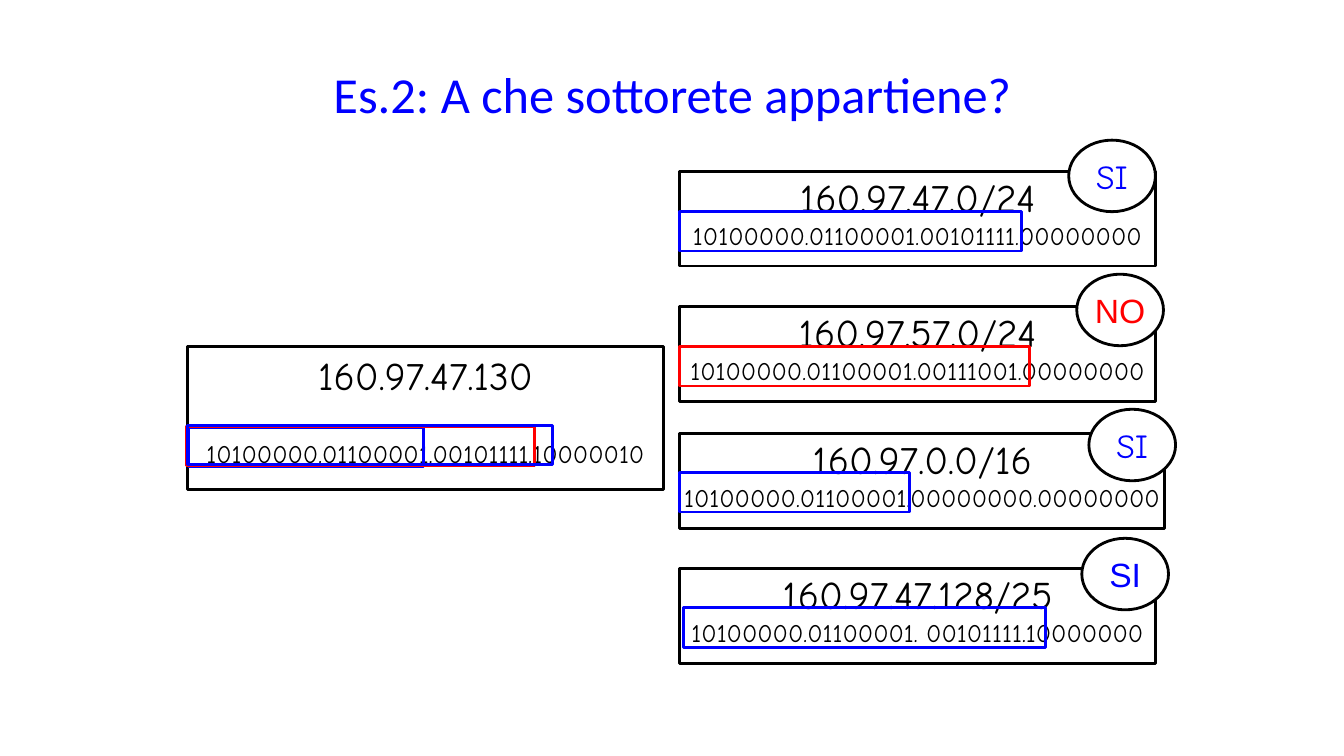
from dataclasses import dataclass

from pptx import Presentation
from pptx.dml.color import RGBColor
from pptx.enum.shapes import MSO_SHAPE
from pptx.enum.text import MSO_ANCHOR, PP_ALIGN
from pptx.util import Inches, Pt

RECTANGLE = MSO_SHAPE.RECTANGLE
OVAL = MSO_SHAPE.OVAL
MIDDLE = MSO_ANCHOR.MIDDLE
TOP = MSO_ANCHOR.TOP
CENTER = PP_ALIGN.CENTER

BLACK = RGBColor(0, 0, 0)
WHITE = RGBColor(255, 255, 255)
BLUE = RGBColor(0, 0, 255)
RED = RGBColor(255, 0, 0)
COMIC = "Comic Neue"
ARIAL = "Arial"


@dataclass
class AddressBox:
    left: float
    top: float
    width: float
    height: float
    address: str
    bits: str
    inset: float = 0.02
    gap: float = 0


@dataclass
class Verdict:
    left: float
    top: float
    text: str
    font: str
    color: RGBColor


@dataclass
class PrefixFrame:
    left: float
    top: float
    width: float
    color: RGBColor


ADDRESS_BOXES = [
    AddressBox(6.74, 1.7, 4.72, 0.94, "160.97.47.0/24",
               "10100000.01100001.00101111.00000000"),
    AddressBox(1.86, 3.44, 4.72, 1.42, "160.97.47.130",
               "10100000.01100001.00101111.10000010", inset=0.04, gap=29),
    AddressBox(6.74, 3.04, 4.72, 0.94, "160.97.57.0/24",
               "10100000.01100001.00111001.00000000"),
    AddressBox(6.74, 4.3, 4.81, 0.94, "160.97.0.0/16",
               "10100000.01100001.00000000.00000000"),
    AddressBox(6.74, 5.64, 4.72, 0.94, "160.97.47.128/25",
               "10100000.01100001. 00101111.10000000"),
]
VERDICTS = [
    Verdict(10.6, 1.39, "SI", COMIC, BLUE),
    Verdict(10.8, 4.06, "SI", COMIC, BLUE),
    Verdict(10.68, 2.72, "NO", ARIAL, RED),
    Verdict(10.73, 5.34, "SI", ARIAL, BLUE),
]
PREFIX_FRAMES = [
    PrefixFrame(6.74, 2.1, 3.39, BLUE),
    PrefixFrame(6.74, 3.44, 3.47, RED),
    PrefixFrame(6.74, 4.69, 2.28, BLUE),
    PrefixFrame(1.85, 4.23, 3.45, BLUE),
    PrefixFrame(1.87, 4.24, 2.33, BLUE),
    PrefixFrame(1.85, 4.23, 3.45, RED),
    PrefixFrame(1.86, 4.22, 3.62, BLUE),
    PrefixFrame(6.78, 6.03, 3.59, BLUE),
]


def add_outline(slide, kind, left: float, top: float, width: float,
                height: float, color: RGBColor):
    """Add an unfilled shape with a two-point line and no text margins."""
    shape = slide.shapes.add_shape(
        kind, Inches(left), Inches(top), Inches(width), Inches(height))
    shape.shadow.inherit = False
    shape.fill.background()
    shape.line.color.rgb = color
    shape.line.width = Pt(2)
    frame = shape.text_frame
    frame.word_wrap = False
    frame.margin_left = frame.margin_right = 0
    frame.margin_top = frame.margin_bottom = 0
    return shape


def format_paragraph(paragraph, text: str, size: float, font: str,
                     color: RGBColor) -> None:
    paragraph.text = text
    paragraph.alignment = CENTER
    paragraph.font.size = Pt(size)
    paragraph.font.name = font
    paragraph.font.color.rgb = color


def add_address_box(slide, box: AddressBox) -> None:
    shape = add_outline(slide, RECTANGLE, box.left, box.top, box.width,
                        box.height, BLACK)
    frame = shape.text_frame
    frame.vertical_anchor = TOP
    frame.margin_top = Inches(box.inset)
    format_paragraph(frame.paragraphs[0], box.address, 28, COMIC, BLACK)
    bits = frame.add_paragraph()
    format_paragraph(bits, box.bits, 18, COMIC, BLACK)
    bits.space_before = Pt(box.gap)


def add_verdict(slide, verdict: Verdict) -> None:
    shape = add_outline(slide, OVAL, verdict.left, verdict.top, 0.86, 0.71,
                        BLACK)
    shape.fill.solid()
    shape.fill.fore_color.rgb = WHITE
    shape.text_frame.vertical_anchor = MIDDLE
    format_paragraph(shape.text_frame.paragraphs[0], verdict.text, 24,
                     verdict.font, verdict.color)


def add_title(slide, text: str) -> None:
    title = slide.shapes.title
    title.left, title.top = Inches(0.67), Inches(0.3)
    title.width, title.height = Inches(12), Inches(1.25)
    title.text_frame.vertical_anchor = MIDDLE
    format_paragraph(title.text_frame.paragraphs[0], text, 36, "Calibri", BLUE)


def main() -> None:
    presentation = Presentation()
    presentation.slide_width = Inches(13.33)
    presentation.slide_height = Inches(7.5)
    slide = presentation.slides.add_slide(presentation.slide_layouts[5])
    add_title(slide, "Es.2: A che sottorete appartiene?")
    for box in ADDRESS_BOXES:
        add_address_box(slide, box)
    for verdict in VERDICTS:
        add_verdict(slide, verdict)
    for frame in PREFIX_FRAMES:
        add_outline(slide, RECTANGLE, frame.left, frame.top, frame.width,
                    0.39, frame.color)
    presentation.save("out.pptx")


if __name__ == "__main__":
    main()
